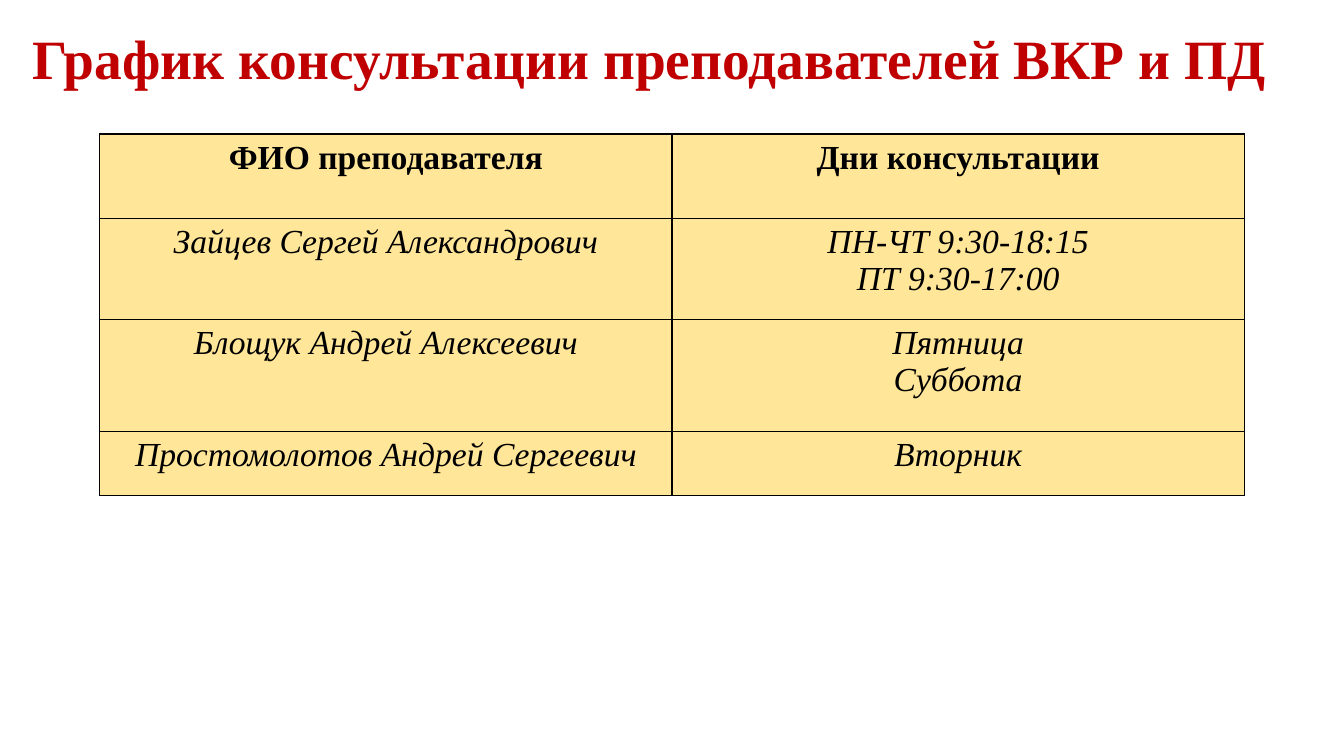
from dataclasses import dataclass

from lxml.etree import SubElement
from pptx import Presentation
from pptx.dml.color import RGBColor as Color
from pptx.enum.text import MSO_ANCHOR as Anchor, PP_ALIGN as Align
from pptx.oxml.ns import qn
from pptx.util import Inches, Pt


@dataclass(frozen=True)
class Theme:
    font: str = "Times New Roman"
    title_color: str = "C00000"
    text_color: str = "000000"
    cell_color: str = "FFE699"
    border_color: str = "000000"
    title_size: float = 39.6
    cell_size: float = 24
    border_width: float = 1


class SlideBuilder:
    def __init__(self, presentation, theme):
        self.theme = theme
        self.slide = presentation.slides.add_slide(presentation.slide_layouts[6])

    def add_lines(self, frame, lines, color, align, line_spacing=1.0, **font_format):
        """Put each line in its own paragraph with one shared format."""
        for index, line in enumerate(lines):
            paragraph = frame.paragraphs[0] if index == 0 else frame.add_paragraph()
            paragraph.alignment = align
            paragraph.line_spacing = line_spacing
            run = paragraph.add_run()
            run.text = line
            run.font.color.rgb = Color.from_string(color)
            for name, value in {"name": self.theme.font, **font_format}.items():
                setattr(run.font, name, value)

    def title(self, text, left, top, width, height):
        box = self.slide.shapes.add_textbox(*map(Inches, (left, top, width, height)))
        frame = box.text_frame
        for name, value in {"word_wrap": True, "vertical_anchor": Anchor.MIDDLE}.items():
            setattr(frame, name, value)
        self.add_lines(frame, [text], self.theme.title_color, Align.LEFT, 0.9,
                       size=Pt(self.theme.title_size), bold=True)

    def border(self, cell):
        """Draw the four cell edges; they must come before the cell fill."""
        properties = cell._tc.get_or_add_tcPr()
        for edge in ("a:lnL", "a:lnR", "a:lnT", "a:lnB"):
            line = SubElement(properties, qn(edge), w=str(Pt(self.theme.border_width)))
            fill = SubElement(line, qn("a:solidFill"))
            SubElement(fill, qn("a:srgbClr"), val=self.theme.border_color)

    def table(self, rows, row_heights, left, top, width):
        column_count = len(rows[0])
        table = self.slide.shapes.add_table(
            len(rows), column_count,
            *map(Inches, (left, top, width, sum(row_heights)))).table
        for column in table.columns:
            column.width = Inches(width / column_count)
        for row_index, (row, height) in enumerate(zip(rows, row_heights)):
            table.rows[row_index].height = Inches(height)
            is_header = row_index == 0
            for column_index, lines in enumerate(row):
                cell = table.cell(row_index, column_index)
                self.border(cell)
                cell.fill.solid()
                cell.fill.fore_color.rgb = Color.from_string(self.theme.cell_color)
                self.add_lines(cell.text_frame, lines, self.theme.text_color, Align.CENTER,
                               size=Pt(self.theme.cell_size),
                               bold=is_header, italic=not is_header)


SCHEDULE = [
    (["ФИО преподавателя"], ["Дни консультации"]),
    (["Зайцев Сергей Александрович"], ["ПН-ЧТ 9:30-18:15", "ПТ 9:30-17:00"]),
    (["Блощук Андрей Алексеевич"], ["Пятница", "Суббота"]),
    (["Простомолотов Андрей Сергеевич"], ["Вторник"]),
]


def main():
    presentation = Presentation()
    presentation.slide_width = Inches(13.33)
    presentation.slide_height = Inches(7.5)
    builder = SlideBuilder(presentation, Theme())
    builder.title("График консультации преподавателей ВКР и ПД", 0.22, 0.27, 12.76, 0.68)
    builder.table(SCHEDULE, [0.84, 1, 1.11, 0.64], left=0.99, top=1.33, width=11.35)
    presentation.save("out.pptx")


if __name__ == "__main__":
    main()
